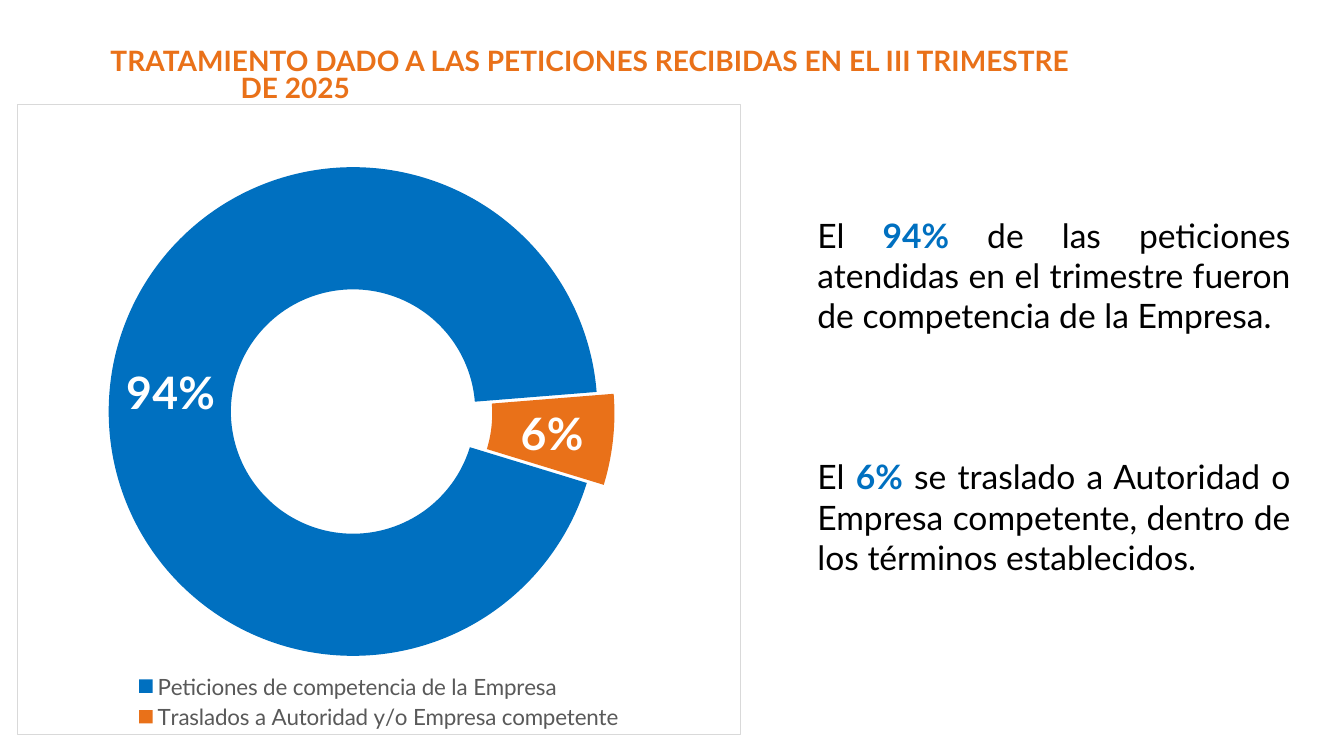
"""Slide on how the requests received in the third quarter of 2025 were handled."""
from lxml import etree
from pptx import Presentation
from pptx.chart.data import CategoryChartData as Data
from pptx.dml.color import RGBColor
from pptx.enum.chart import XL_CHART_TYPE as Kind, XL_LEGEND_POSITION as Spot
from pptx.enum.text import MSO_ANCHOR as Anchor, MSO_AUTO_SIZE as Auto, PP_ALIGN as Align
from pptx.oxml import parse_xml
from pptx.oxml.ns import nsdecls, qn
from pptx.util import Cm, Pt

BLUE, ORANGE, GREY, BLACK = "0070C0", "E97119", "595959", "000000"


def paint(item, tone):
    item.rgb = RGBColor.from_string(tone)


def style(font, size=24, tone=BLACK, bold=False, text=None):
    """Format a font, or add a formatted run when given a paragraph and text."""
    if text is not None:
        run = font.add_run()
        run.text = text
        font = run.font
    font.name, font.size, font.bold = "Lato", Pt(size), bold
    paint(font.color, tone)


deck = Presentation()
deck.slide_width, deck.slide_height = Cm(33.87), Cm(19.05)
slide = deck.slides.add_slide(deck.slide_layouts[5])

title = slide.shapes.title
title.left, title.top, title.width, title.height = Cm(2.51), Cm(1.12), Cm(25.2), Cm(0.97)
frame = title.text_frame
frame.word_wrap, frame.auto_size = True, Auto.NONE
frame.vertical_anchor = Anchor.TOP
head = frame.paragraphs[0]
head.alignment, head.line_spacing, head.space_before = Align.LEFT, Pt(19.5), Pt(0)
props = head._p.get_or_add_pPr()
props.set("marL", str(Cm(3.3)))
props.set("indent", str(Cm(-3.28)))
style(head, text="TRATAMIENTO DADO A LAS PETICIONES RECIBIDAS EN EL III TRIMESTRE DE 2025",
      size=20, tone=ORANGE, bold=True)

box = slide.shapes.add_textbox(Cm(20.35), Cm(5.28), Cm(12.42), Cm(9.5))
frame = box.text_frame
frame.word_wrap = True
notes = [
    ("94%", " de las peticiones atendidas en el trimestre fueron de competencia de la Empresa."),
    ("6%", " se traslado a Autoridad o Empresa competente, dentro de los términos establecidos."),
]
for i, (share, rest) in enumerate(notes):
    par = frame.add_paragraph() if i else frame.paragraphs[0]
    par.alignment, par.space_before = Align.JUSTIFY, Pt(86.4 * i)
    style(par, text="El ")
    style(par, text=share, tone=BLUE, bold=True)
    style(par, text=rest)

data = Data(number_format="0%")
data.categories = ["Peticiones de competencia de la Empresa",
                   "Traslados a Autoridad y/o Empresa competente"]
data.add_series("Series 1", (0.94, 0.06))
chart = slide.shapes.add_chart(Kind.DOUGHNUT, Cm(0.43), Cm(2.62), Cm(18.24), Cm(15.9), data).chart
chart.has_title = False
style(chart.font, size=10)
chart.has_legend = True
chart.legend.position, chart.legend.include_in_layout = Spot.BOTTOM, False
style(chart.legend.font, size=16, tone=GREY)

plot = chart.plots[0]
plot.vary_by_categories = True
ring = plot._element
for tag, val in (("firstSliceAng", 107), ("holeSize", 50)):
    node = ring.find(qn("c:" + tag))
    if node is None:
        node = etree.SubElement(ring, qn("c:" + tag))
    node.set("val", str(val))

series = plot.series[0]
burst = parse_xml(f'<c:explosion {nsdecls("c")} val="7"/>')
series._element.find(qn("c:tx")).addnext(burst)
for i, tone in enumerate((BLUE, ORANGE)):
    fill = series.points[i].format.fill
    fill.solid()
    paint(fill.fore_color, tone)
labels = series.data_labels
labels.show_value, labels.show_percentage = True, False
labels.number_format, labels.number_format_is_linked = "0%", False
style(labels.font, size=32, tone="FFFFFF", bold=True)

area = chart._chartSpace.find(qn("c:chart")).find(qn("c:plotArea"))
old = area.find(qn("c:layout"))
if old is not None:
    area.remove(old)
sides = "".join(f'<c:{tag} val="{val}"/>' for tag, val in (
    ("layoutTarget", "inner"), ("xMode", "edge"), ("yMode", "edge"),
    ("x", 0.126), ("y", 0.039), ("w", 0.7), ("h", 0.9)))
area.insert(0, parse_xml(
    f'<c:layout {nsdecls("c")}><c:manualLayout>{sides}</c:manualLayout></c:layout>'))
chart._chartSpace.find(qn("c:txPr")).addprevious(parse_xml(
    f'<c:spPr {nsdecls("c", "a")}><a:noFill/><a:ln w="{Pt(0.75)}"><a:solidFill>'
    '<a:srgbClr val="D9D9D9"/></a:solidFill></a:ln></c:spPr>'))

deck.save("out.pptx")
